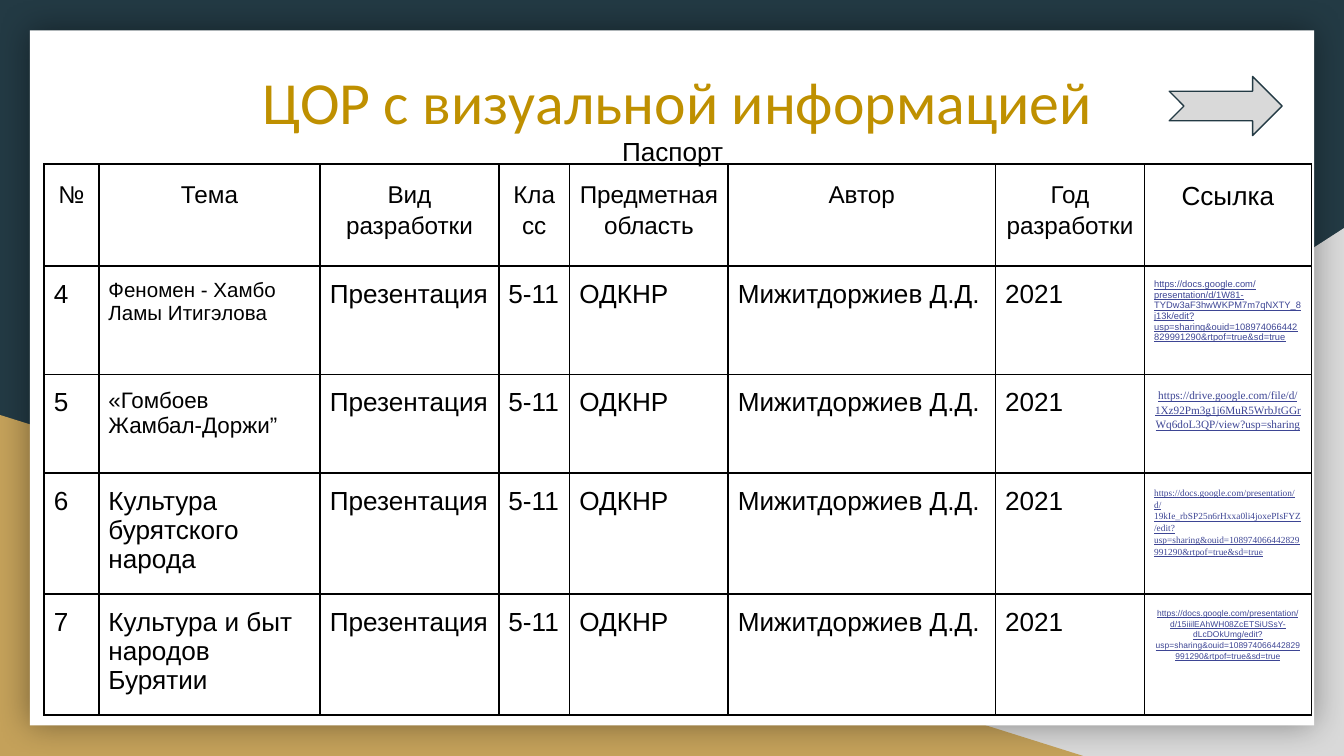
from lxml import etree
from pptx import Presentation
from pptx.dml.color import RGBColor
from pptx.enum.shapes import MSO_SHAPE
from pptx.enum.text import MSO_ANCHOR, PP_ALIGN
from pptx.oxml import parse_xml
from pptx.oxml.ns import nsdecls
from pptx.util import Pt

TRIANGLE, RECT = MSO_SHAPE.RIGHT_TRIANGLE, MSO_SHAPE.RECTANGLE
ARROW = MSO_SHAPE.NOTCHED_RIGHT_ARROW
LEFT, CENTER = PP_ALIGN.LEFT, PP_ALIGN.CENTER
TOP, MIDDLE = MSO_ANCHOR.TOP, MSO_ANCHOR.MIDDLE
SANS, SERIF = "Arial", "Times New Roman"
BLACK, NAVY, GRAY, LINK = "000000", "233A44", "D9D9D9", "3D4594"

# Content
TITLE = "ЦОР с визуальной информацией"
SUBTITLE = "Паспорт"
HEADERS = ["№", "Тема", "Вид разработки", "Класс", "Предметная область",
           "Автор", "Год разработки", "Ссылка"]
COMMON = ["Презентация", "5-11", "ОДКНР", "Мижитдоржиев Д.Д.", "2021"]
DOCS = "https://docs.google.com/presentation/d/"
SHARING = "/edit?usp=sharing&ouid=108974066442829991290&rtpof=true&sd=true"
# number, topic, topic size, link, link size, link font, link alignment, line spacing
RESOURCES = [
    ("4", "Феномен - Хамбо Ламы Итигэлова", 11,
     DOCS + "1W81-TYDw3aF3hwWKPM7m7qNXTY_8j13k" + SHARING, 5, SANS, LEFT, 1),
    ("5", "«Гомбоев\nЖамбал-Доржи”", 12,
     "https://drive.google.com/file/d/1Xz92Pm3g1j6MuR5WrbJtGGrWq6doL3QP/view?usp=sharing",
     6, SERIF, CENTER, 1.15),
    ("6", "Культура бурятского народа", 14,
     DOCS + "19kIe_rbSP25n6rHxxa0li4joxePIsFYZ" + SHARING, 5, SERIF, LEFT, 1.15),
    ("7", "Культура и быт народов Бурятии", 14,
     DOCS + "15iiilEAhWH08ZcETSiUSsY-dLcDOkUmg" + SHARING, 4.5, SANS, CENTER, 1.15),
]
COL_WIDTHS = [29.3, 118.6, 95.7, 38, 84.9, 143.2, 79.9, 89.4]
ROW_HEIGHTS = [54.7, 58.1, 52.8, 61.6, 61.6]


def rgb(value):
    return RGBColor.from_string(value)


def add_shape(s, kind, box, fill, line=None):
    sp = s.shapes.add_shape(kind, *map(Pt, box))
    sp.shadow.inherit = False
    sp.fill.solid()
    sp.fill.fore_color.rgb = rgb(fill)
    if line:
        sp.line.color.rgb = rgb(line)
        sp.line.width = Pt(0.75)
    else:
        sp.line.fill.background()
    return sp


def write(tf, text, size, font=SANS, color=BLACK, align=LEFT, spacing=1, underline=None):
    tf.word_wrap = True
    tf.text = text
    for p in tf.paragraphs:
        p.alignment, p.line_spacing = align, spacing
        f = p.font
        f.name, f.size, f.underline = font, Pt(size), underline
        f.color.rgb = rgb(color)


def add_text(s, box, text, anchor, **style):
    tf = s.shapes.add_textbox(*map(Pt, box)).text_frame
    tf.margin_left = tf.margin_right = tf.margin_top = tf.margin_bottom = Pt(7.2)
    tf.vertical_anchor = anchor
    write(tf, text, align=CENTER, **style)


def add_borders(cell):
    tc_pr = cell._tc.get_or_add_tcPr()
    for i, side in enumerate(("lnL", "lnR", "lnT", "lnB")):
        tc_pr.insert(i, parse_xml(
            f'<a:{side} {nsdecls("a")} w="12700"><a:solidFill>'
            f'<a:srgbClr val="{BLACK}"/></a:solidFill></a:{side}>'))


def add_glow_shadow(sp):
    effects = sp._element.spPr.find("{*}effectLst")
    shadow = parse_xml(
        f'<a:outerShdw {nsdecls("a")} blurRad="{Pt(18)}" dist="0" dir="0" '
        f'algn="ctr" rotWithShape="0"><a:srgbClr val="{BLACK}"/></a:outerShdw>')
    etree.SubElement(shadow[0], shadow[0].tag.replace("srgbClr", "alpha"), val="40000")
    effects.append(shadow)


prs = Presentation()
prs.slide_width, prs.slide_height = Pt(720), Pt(405)
s = prs.slides.add_slide(prs.slide_layouts[6])

# Background and white card
s.background.fill.solid()
s.background.fill.fore_color.rgb = rgb(NAVY)
corner = add_shape(s, TRIANGLE, (282.2, 122.2, 437.8, 282.8), GRAY)
corner._element.spPr.xfrm.set("flipH", "1")
add_shape(s, TRIANGLE, (0, 222.3, 580.3, 182.7), "C4A15A")
add_glow_shadow(add_shape(s, RECT, (16, 16.3, 688, 372.4), "FFFFFF"))

# Title
add_text(s, (67.7, 27.4, 591, 59), TITLE, TOP, size=32, font="Calibri", color="BF9000")

# Table of resources
table = s.shapes.add_table(len(ROW_HEIGHTS), len(COL_WIDTHS), Pt(23.6), Pt(87.8),
                           Pt(sum(COL_WIDTHS)), Pt(sum(ROW_HEIGHTS))).table
table.first_row = table.horz_banding = False
for col, width in zip(table.columns, COL_WIDTHS):
    col.width = Pt(width)
for row, height in zip(table.rows, ROW_HEIGHTS):
    row.height = Pt(height)

for cell in table.iter_cells():
    cell.margin_left = cell.margin_right = Pt(5.2)
    cell.margin_top = cell.margin_bottom = Pt(7.2)
    cell.fill.background()
    add_borders(cell)

for i, text in enumerate(HEADERS):
    size = 14 if i == len(HEADERS) - 1 else 13
    write(table.cell(0, i).text_frame, text, size, align=CENTER, spacing=1.15)

for r, (number, topic, topic_size, link, link_size, font, align, spacing) in enumerate(RESOURCES, 1):
    number_size = 13 if r == 0 else 14
    write(table.cell(r, 0).text_frame, number, number_size)
    write(table.cell(r, 1).text_frame, topic, topic_size)
    for c, text in enumerate(COMMON, 2):
        write(table.cell(r, c).text_frame, text, 14)
    write(table.cell(r, 7).text_frame, link, link_size, font, LINK, align, spacing, True)

# Subtitle and arrow
add_text(s, (258.5, 72, 203.8, 15.8), SUBTITLE, MIDDLE, size=14, spacing=1.15)
add_shape(s, ARROW, (626.4, 41, 60.5, 31.7), GRAY, NAVY)

prs.save("out.pptx")
